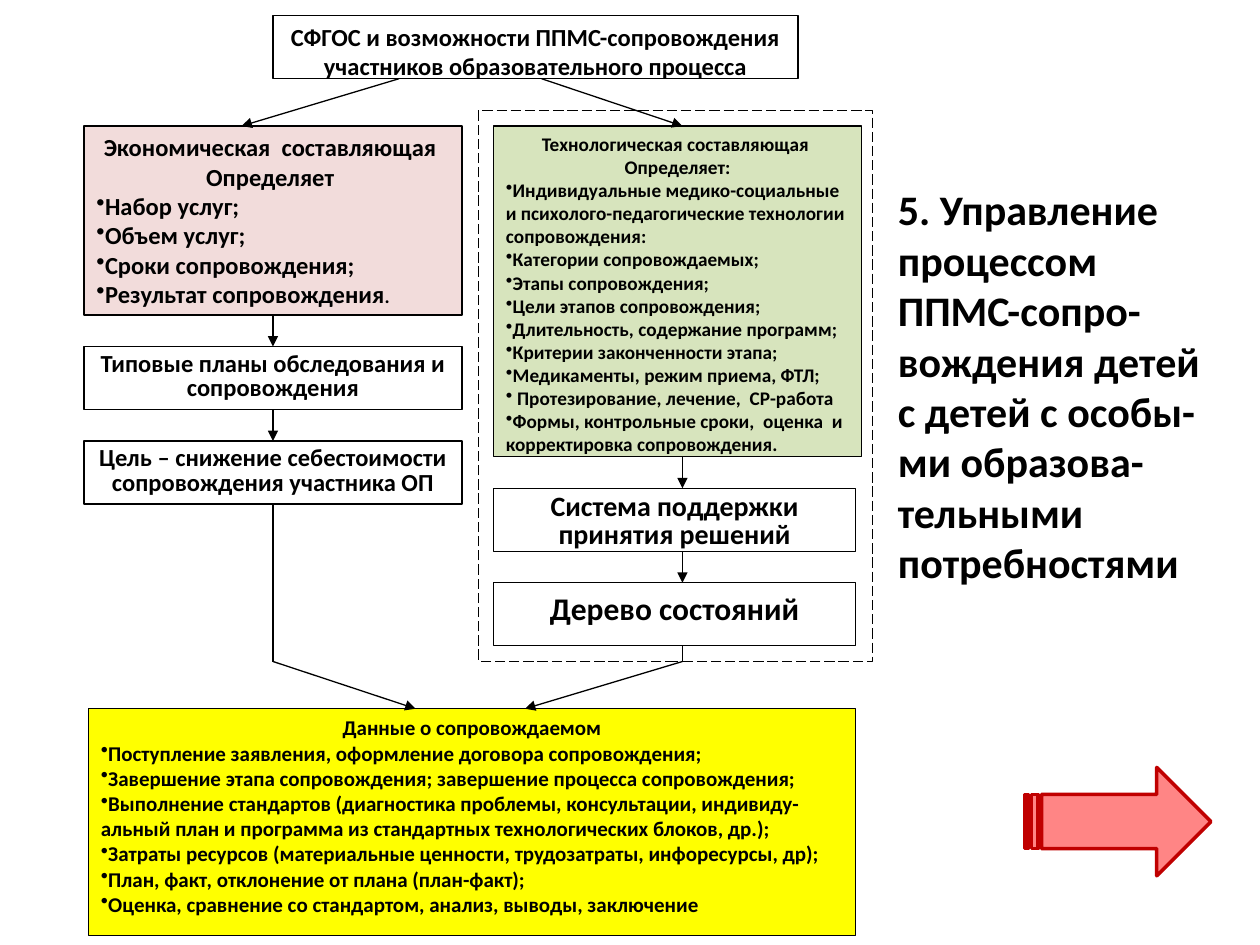
from lxml import etree
from pptx import Presentation
from pptx.dml.color import RGBColor
from pptx.enum import dml, shapes, text
from pptx.oxml import ns
from pptx.util import Pt

BLACK = RGBColor(0, 0, 0)
WHITE = RGBColor(0xFF, 0xFF, 0xFF)
PINK = RGBColor(0xF2, 0xDC, 0xDB)
GREEN = RGBColor(0xD7, 0xE4, 0xBD)
YELLOW = RGBColor(0xFF, 0xFF, 0)
RED = RGBColor(0xFF, 0, 0)
DARK_RED = RGBColor(0xC0, 0, 0)
FONT = "Calibri"

# name: (left, top, width, height), fill, text size, line spacing, headings, bullets
BOXES = {
    "standard": ((156, 9, 300, 36), WHITE, 14, None, [
        "СФГОС и возможности ППМС-сопровождения участников образовательного процесса"], []),
    "economic": ((48, 72, 216, 108), PINK, 14, None, [
        "Экономическая  составляющая ", "Определяет "], [
        "Набор услуг;", "Объем услуг;", "Сроки сопровождения;",
        "Результат сопровождения"]),
    "technology": ((282, 72, 210.5, 189), GREEN, 11, None, [
        "Технологическая составляющая ", "Определяет:"], [
        "Индивидуальные медико-социальные и психолого-педагогические технологии сопровождения:",
        "Категории сопровождаемых;",
        "Этапы сопровождения;",
        "Цели этапов сопровождения;",
        "Длительность, содержание программ;",
        "Критерии законченности этапа;",
        "Медикаменты, режим приема, ФТЛ;",
        " Протезирование, лечение,  СР-работа",
        "Формы, контрольные сроки,  оценка  и корректировка сопровождения."]),
    "plans": ((48, 198, 216, 36), WHITE, 14, 14, [
        "Типовые планы обследования и сопровождения"], []),
    "goal": ((48, 252, 216, 36), WHITE, 14, 14, [
        "Цель – снижение себестоимости сопровождения участника ОП"], []),
    "support": ((282, 279, 207, 36), WHITE, 16, 16, [
        "Система поддержки принятия решений"], []),
    "states": ((282, 333, 207, 36), WHITE, 18, None, ["Дерево состояний"], []),
    "data": ((50.5, 405, 438.5, 129.5), YELLOW, 12, None, ["Данные о сопровождаемом"], [
        "Поступление заявления, оформление договора сопровождения;",
        "Завершение этапа сопровождения; завершение процесса сопровождения;",
        "Выполнение стандартов (диагностика проблемы, консультации, индивиду-альный план "
        "и программа из стандартных технологических блоков, др.);",
        "Затраты ресурсов (материальные ценности, трудозатраты, инфоресурсы, др);",
        "План, факт, отклонение от плана (план-факт);",
        "Оценка, сравнение со стандартом, анализ, выводы, заключение"]),
}
FRAME = (273.5, 63, 225, 315)
TITLE = ("5. Управление процессом ППМС-сопро-вождения детей с детей с особы-ми "
         "образова-тельными потребностями")
TITLE_AREA = (506, 101.5, 191.5, 240)
NEXT_ARROW = (585.5, 438.5, 106.5, 62)

LEFT_X, RIGHT_X, JOIN_Y = 156, 390, 378
# start, end, arrowhead, box joined at its bottom, box joined at its top
LINKS = [
    ((228, 45), (138, 72), True, None, None),
    ((309.5, 45), (RIGHT_X, 72), True, None, None),
    ((LEFT_X, 180), (LEFT_X, 198), True, "economic", "plans"),
    ((LEFT_X, 234), (LEFT_X, 252), True, "plans", "goal"),
    ((LEFT_X, 288), (LEFT_X, JOIN_Y), False, "goal", None),
    ((LEFT_X, JOIN_Y), (237.5, 405), True, None, None),
    ((RIGHT_X, 261), (RIGHT_X, 279), True, None, None),
    ((RIGHT_X, 315), (RIGHT_X, 333), True, None, None),
    ((RIGHT_X, 369), (RIGHT_X, JOIN_Y), False, None, None),
    ((RIGHT_X, JOIN_Y), (300, 405), True, None, None),
]

prs = Presentation()
prs.slide_width, prs.slide_height = Pt(720), Pt(540)
slide = prs.slides.add_slide(prs.slide_layouts[6])


def add_run(paragraph, words, size):
    run = paragraph.add_run()
    run.text = words
    run.font.name, run.font.size, run.font.bold = FONT, Pt(size), True
    run.font.color.rgb = BLACK


def add_outlined(preset, area, line_color, line_width):
    shape = slide.shapes.add_shape(preset, *map(Pt, area))
    shape.shadow.inherit = False
    shape.line.color.rgb = line_color
    shape.line.width = Pt(line_width)
    return shape


def add_box(area, fill, size, spacing, headings, bullets):
    box = add_outlined(shapes.MSO_SHAPE.RECTANGLE, area, BLACK, 0.75)
    box.fill.solid()
    box.fill.fore_color.rgb = fill
    frame = box.text_frame
    frame.word_wrap = True
    frame.vertical_anchor = text.MSO_ANCHOR.TOP
    for i, words in enumerate(headings + bullets):
        paragraph = frame.paragraphs[0] if i == 0 else frame.add_paragraph()
        if spacing:
            paragraph.line_spacing = Pt(spacing)
        if i < len(headings):
            paragraph.alignment = text.PP_ALIGN.CENTER
        else:
            paragraph.alignment = text.PP_ALIGN.LEFT
            properties = paragraph._p.get_or_add_pPr()
            etree.SubElement(properties, ns.qn("a:buChar"), char="•")
        add_run(paragraph, words, size)
    return box


def add_link(start, end, has_head, source, target):
    link = slide.shapes.add_connector(shapes.MSO_CONNECTOR.STRAIGHT, *map(Pt, start + end))
    if source:
        link.begin_connect(boxes[source], 2)
    if target:
        link.end_connect(boxes[target], 0)
    link.line.color.rgb = BLACK
    link.line.width = Pt(0.75)
    if has_head:
        etree.SubElement(link.line._get_or_add_ln(), ns.qn("a:tailEnd"), type="triangle")
    etree.SubElement(link._element.spPr, ns.qn("a:effectLst"))


boxes = {name: add_box(*box) for name, box in BOXES.items()}
add_run(boxes["economic"].text_frame.paragraphs[-1], ".", 11)

frame = add_outlined(shapes.MSO_SHAPE.RECTANGLE, FRAME, BLACK, 0.75)
frame.fill.background()
frame.line.dash_style = dml.MSO_LINE.LONG_DASH

for link in LINKS:
    add_link(*link)

title = slide.shapes.add_textbox(*map(Pt, TITLE_AREA)).text_frame
title.word_wrap = True
add_run(title.paragraphs[0], TITLE, 24)

next_arrow = add_outlined(shapes.MSO_SHAPE.STRIPED_RIGHT_ARROW, NEXT_ARROW, DARK_RED, 2)
next_arrow.fill.solid()
next_arrow.fill.fore_color.rgb = RED
red = next_arrow._element.spPr.find(ns.qn("a:solidFill"))[0]
etree.SubElement(red, ns.qn("a:alpha"), val="48000")

prs.save("out.pptx")
